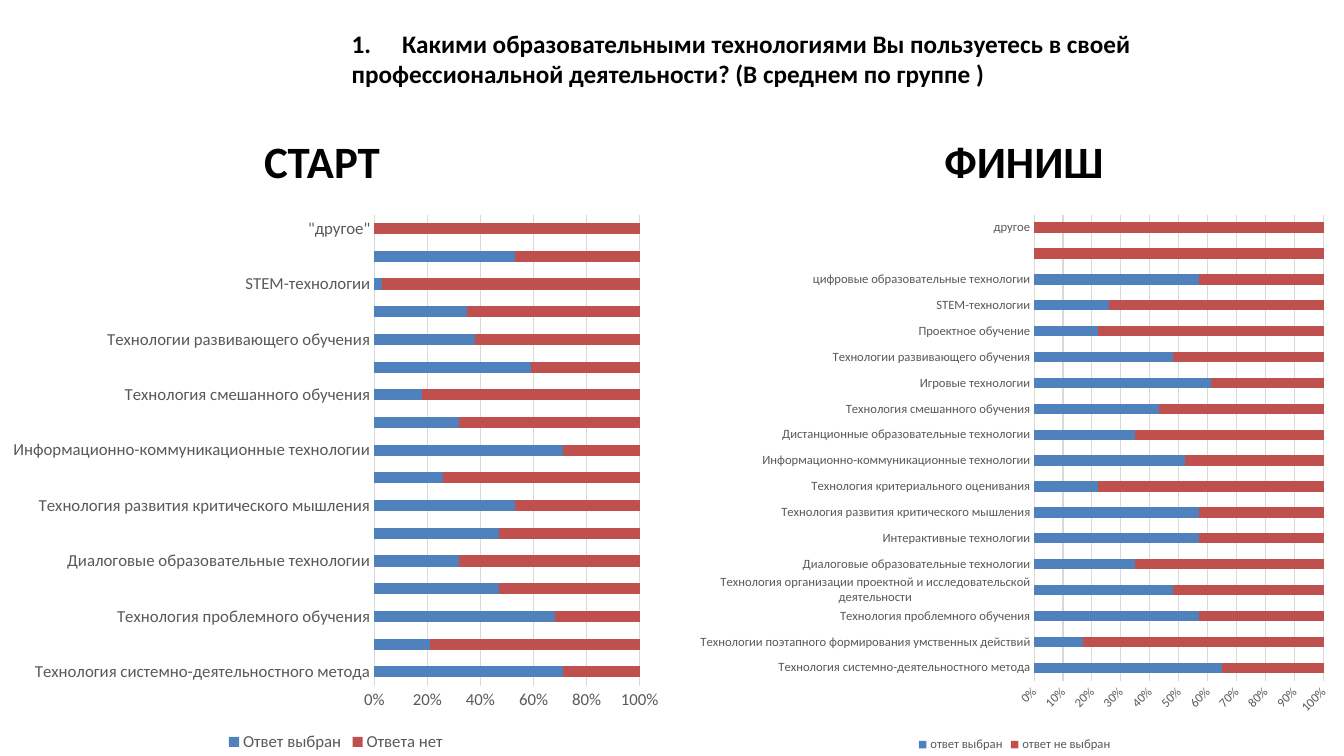
from pptx import Presentation, util as u
from pptx.chart.data import CategoryChartData
from pptx.dml.color import RGBColor
from pptx.enum import chart as ch, text

Pt = u.Pt
FACE, BLACK, GREY, PALE = "Calibri", "000000", "595959", "D9D9D9"
COLORS = ["4F81BD", "C0504D"]

TITLE = ("1.\tКакими образовательными технологиями Вы пользуетесь в своей "
         "профессиональной деятельности? (В среднем по группе )")
METHODS = [
    "Технология системно-деятельностного метода",
    "Технологии поэтапного формирования умственных действий",
    "Технология проблемного обучения",
    "Технология организации проектной и исследовательской деятельности",
    "Диалоговые образовательные технологии",
    "Интерактивные технологии",
    "Технология развития критического мышления",
    "Технология критериального оценивания",
    "Информационно-коммуникационные технологии",
    "Дистанционные образовательные технологии",
    "Технология смешанного обучения",
    "Игровые технологии",
    "Технологии развивающего обучения",
    "Проектное обучение",
    "STEM-технологии",
    "цифровые образовательные технологии",
]
STAGES = [
    {"head": "СТАРТ", "head_box": (181.5, 92, 98, 46),
     "box": (0, 145.5, 480, 394.5), "size": 12,
     "cats": METHODS + ['"другое"'],
     "names": ("Ответ выбран", "Ответа нет"),
     "chosen": [71, 21, 68, 47, 32, 47, 53, 26, 71, 32, 18, 59, 38, 35, 3,
                53, 0]},
    {"head": "ФИНИШ", "head_box": (667.5, 92, 129.5, 46),
     "box": (491, 145.5, 467.5, 394.5), "size": 9,
     "cats": METHODS + ["", "другое"],
     "names": ("ответ выбран", "ответ не выбран"),
     "chosen": [65, 17, 57, 48, 35, 57, 57, 22, 52, 35, 43, 61, 48, 22, 26,
                57, 0, 0]},
]


def color(code):
    return RGBColor.from_string(code)


def put(item, **vals):
    for key, val in vals.items():
        setattr(item, key, val)


def style(font, size, code, bold=False):
    put(font, name=FACE, size=Pt(size), bold=bold)
    font.color.rgb = color(code)


def rule(line):
    line.color.rgb = color(PALE)
    line.width = Pt(0.75)


def write(shape, words, size, wrap):
    frame = shape.text_frame
    put(frame, word_wrap=wrap, vertical_anchor=text.MSO_ANCHOR.TOP,
        auto_size=text.MSO_AUTO_SIZE.SHAPE_TO_FIT_TEXT)
    para = frame.paragraphs[0]
    para.alignment = text.PP_ALIGN.LEFT
    run = para.add_run()
    run.text = words
    style(run.font, size, BLACK, True)


def draw(slide, stage):
    """Add the stacked bars of one survey stage."""
    data = CategoryChartData(number_format="General")
    data.categories = stage["cats"]
    rest = [100 - val for val in stage["chosen"]]
    for name, vals in zip(stage["names"], (stage["chosen"], rest)):
        data.add_series(name, vals)
    chart = slide.shapes.add_chart(ch.XL_CHART_TYPE.BAR_STACKED_100,
                                   *map(Pt, stage["box"]), data).chart
    style(chart.font, 10, BLACK)
    put(chart, has_title=False, has_legend=True)
    put(chart.legend, position=ch.XL_LEGEND_POSITION.BOTTOM,
        include_in_layout=False)
    style(chart.legend.font, stage["size"], GREY)

    plot = chart.plots[0]
    put(plot, gap_width=150, overlap=100, vary_by_categories=False)
    for bars, code in zip(plot.series, COLORS):
        bars.format.fill.solid()
        bars.format.fill.fore_color.rgb = color(code)

    cat, val = chart.category_axis, chart.value_axis
    for axis in (cat, val):
        put(axis, major_tick_mark=ch.XL_TICK_MARK.NONE,
            minor_tick_mark=ch.XL_TICK_MARK.NONE)
        style(axis.tick_labels.font, stage["size"], GREY)
    rule(cat.format.line)
    val.format.line.fill.background()
    val.has_major_gridlines = True
    rule(val.major_gridlines.format.line)
    put(val.tick_labels, number_format="0%", number_format_is_linked=False)


def main():
    deck = Presentation()
    put(deck, slide_width=Pt(960), slide_height=Pt(540))
    slide = deck.slides.add_slide(deck.slide_layouts[5])
    title = slide.shapes.title
    put(title, left=Pt(244), top=Pt(16.5), width=Pt(716), height=Pt(51))
    write(title, TITLE, 18, True)
    for stage in STAGES:
        draw(slide, stage)
        head = slide.shapes.add_textbox(*map(Pt, stage["head_box"]))
        write(head, stage["head"], 32, False)
    deck.save("out.pptx")


if __name__ == "__main__":
    main()
